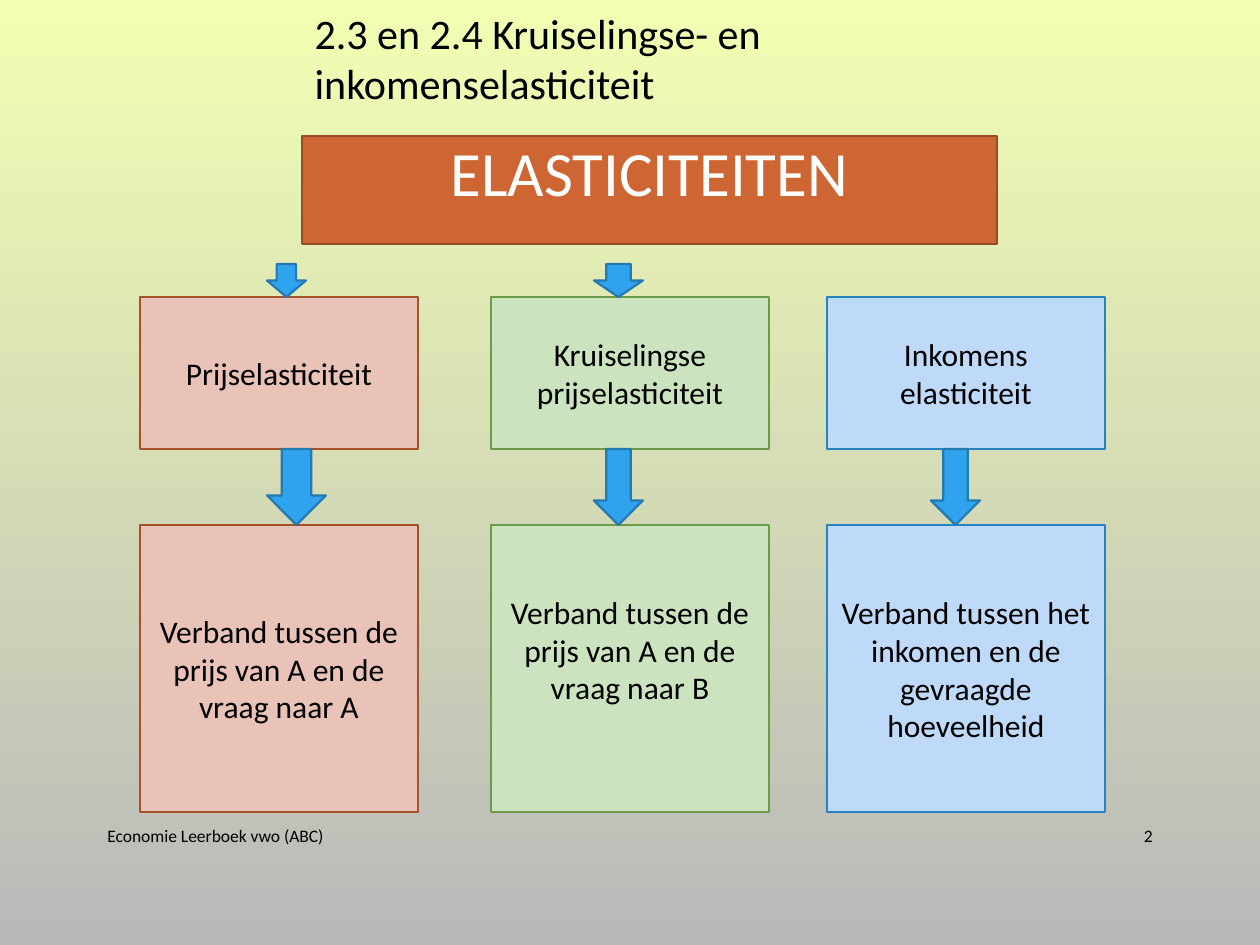
from pptx import Presentation
from pptx.dml.color import RGBColor
from pptx.enum.shapes import MSO_SHAPE
from pptx.enum.text import MSO_ANCHOR, MSO_AUTO_SIZE, PP_ALIGN
from pptx.util import Emu, Pt

RECTANGLE, DOWN_ARROW = MSO_SHAPE.RECTANGLE, MSO_SHAPE.DOWN_ARROW
LEFT, CENTER, RIGHT = PP_ALIGN.LEFT, PP_ALIGN.CENTER, PP_ALIGN.RIGHT
TOP, MIDDLE = MSO_ANCHOR.TOP, MSO_ANCHOR.MIDDLE

BLACK = RGBColor(0x00, 0x00, 0x00)
WHITE = RGBColor(0xFF, 0xFF, 0xFF)
LIME = RGBColor(0xF1, 0xFF, 0xB3)
GREY = RGBColor(0xB9, 0xB9, 0xB9)
ORANGE = RGBColor(0xCE, 0x66, 0x33)
BROWN = RGBColor(0x98, 0x4B, 0x26)
PINK = RGBColor(0xE9, 0xC2, 0xB8)
RUST = RGBColor(0xA5, 0x52, 0x29)
PALE_GREEN = RGBColor(0xCC, 0xE3, 0xBF)
GREEN = RGBColor(0x6B, 0x9B, 0x46)
PALE_BLUE = RGBColor(0xBF, 0xDA, 0xF9)
BLUE = RGBColor(0x26, 0x83, 0xBF)
ARROW_FILL = RGBColor(0x2F, 0xA3, 0xEE)
ARROW_LINE = RGBColor(0x23, 0x79, 0xB0)

PX = 914400 / 126


def write(box, text, size, color, align, anchor):
    frame = box.text_frame
    frame.word_wrap = True
    frame.vertical_anchor = anchor
    frame.text = text
    para = frame.paragraphs[0]
    para.alignment = align
    font = para.runs[0].font
    font.name, font.size, font.color.rgb = "Calibri", Pt(size), color


def add_block(kind, bounds, fill, line, weight):
    block = page.shapes.add_shape(kind, *[Emu(round(v * PX)) for v in bounds])
    block.shadow.inherit = False
    block.fill.solid()
    block.fill.fore_color.rgb = fill
    block.line.color.rgb = line
    block.line.width = Pt(weight)
    return block


deck = Presentation()
deck.slide_width, deck.slide_height = Emu(round(1260 * PX)), Emu(round(945 * PX))
page = deck.slides.add_slide(deck.slide_layouts[5])

# Background, fading from top to bottom
background = page.background.fill
background.gradient()
background.gradient_angle = 270
for stop, color, position in zip(background.gradient_stops, (LIME, GREY), (0, 1)):
    stop.color.rgb = color
    stop.position = position

# Title
title = page.shapes.title
title.left, title.top, title.width, title.height = [
    Emu(round(v * PX)) for v in (302, 1, 814, 63)]
write(title, "2.3 en 2.4 Kruiselingse- en inkomenselasticiteit", 24, BLACK, LEFT, TOP)
title.text_frame.auto_size = MSO_AUTO_SIZE.SHAPE_TO_FIT_TEXT

# Footer and page number
for left, width, text, align in (
        (95, 689, "Economie Leerboek vwo (ABC)", LEFT),
        (1086, 79, "2", RIGHT)):
    footer = page.shapes.add_textbox(
        *[Emu(round(v * PX)) for v in (left, 811, width, 50)])
    write(footer, text, 10, BLACK, align, MIDDLE)

# Heading bar
heading = add_block(RECTANGLE, (302, 136, 695, 108), ORANGE, BROWN, 1.25)
write(heading, "ELASTICITEITEN", 36, WHITE, CENTER, TOP)
heading.text_frame.paragraphs[0].line_spacing = 0.9

# Three columns: kind of elasticity above its meaning
columns = (
    (140, PINK, RUST, "Prijselasticiteit",
     "Verband tussen de prijs van A en de vraag naar A", 6),
    (491, PALE_GREEN, GREEN, "Kruiselingse prijselasticiteit",
     "Verband tussen de prijs van A en de vraag naar B", 44),
    (827, PALE_BLUE, BLUE, "Inkomens elasticiteit",
     "Verband tussen het inkomen en de gevraagde hoeveelheid", 6),
)
for left, fill, line, kind, meaning, bottom_margin in columns:
    kind_box = add_block(RECTANGLE, (left, 297, 278, 152), fill, line, 0.75)
    write(kind_box, kind, 18, BLACK, CENTER, MIDDLE)
    meaning_box = add_block(RECTANGLE, (left, 525, 278, 287), fill, line, 0.75)
    write(meaning_box, meaning, 18, BLACK, CENTER, MIDDLE)
    meaning_box.text_frame.margin_bottom = Emu(round(bottom_margin * PX))

# Arrows between the rows
for top, height, arrows in (
        (264, 33, ((267, 39), (594, 49))),
        (449, 76, ((267, 59), (594, 49), (931, 49)))):
    for left, width in arrows:
        add_block(DOWN_ARROW, (left, top, width, height), ARROW_FILL, ARROW_LINE, 1.25)

deck.save("out.pptx")
